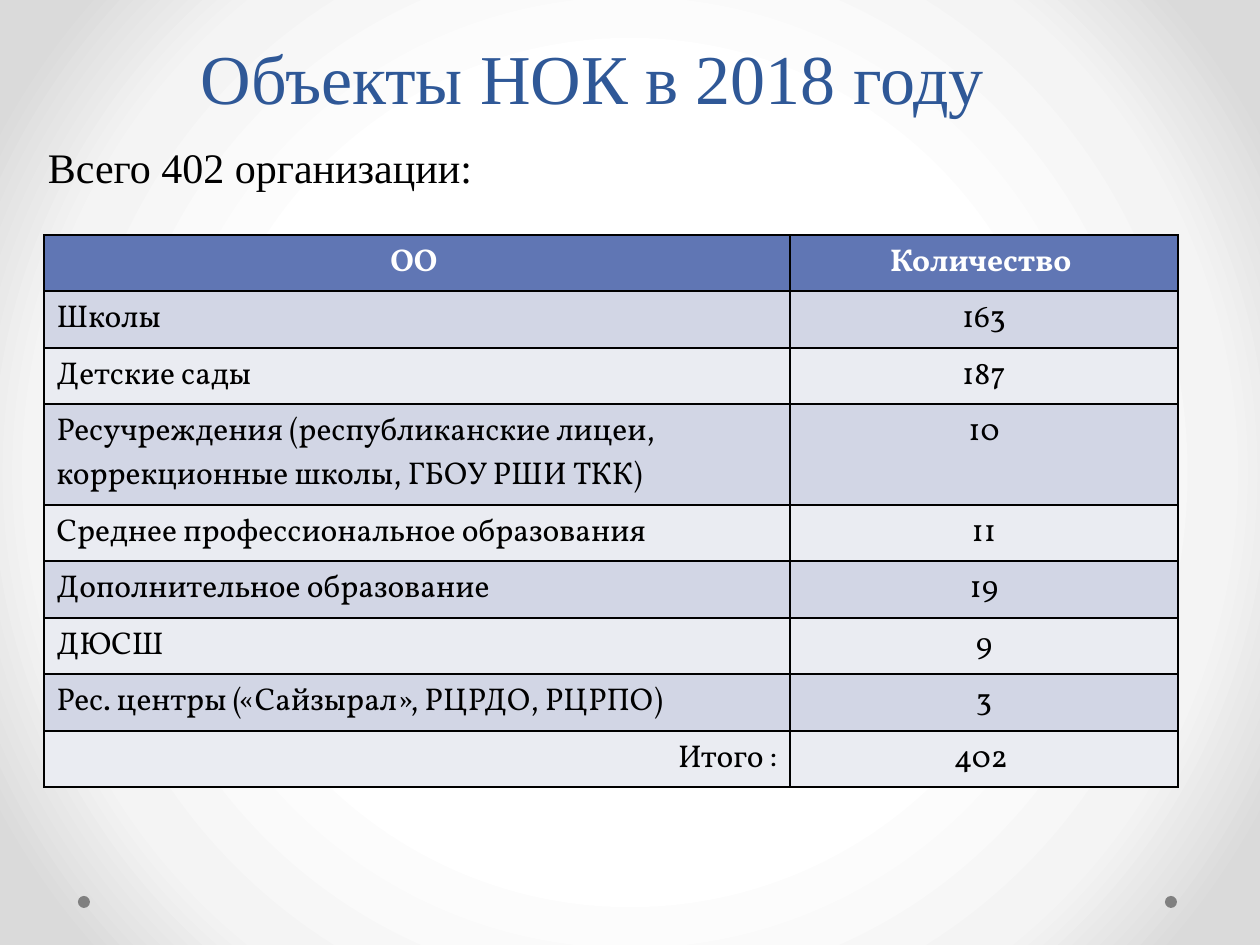
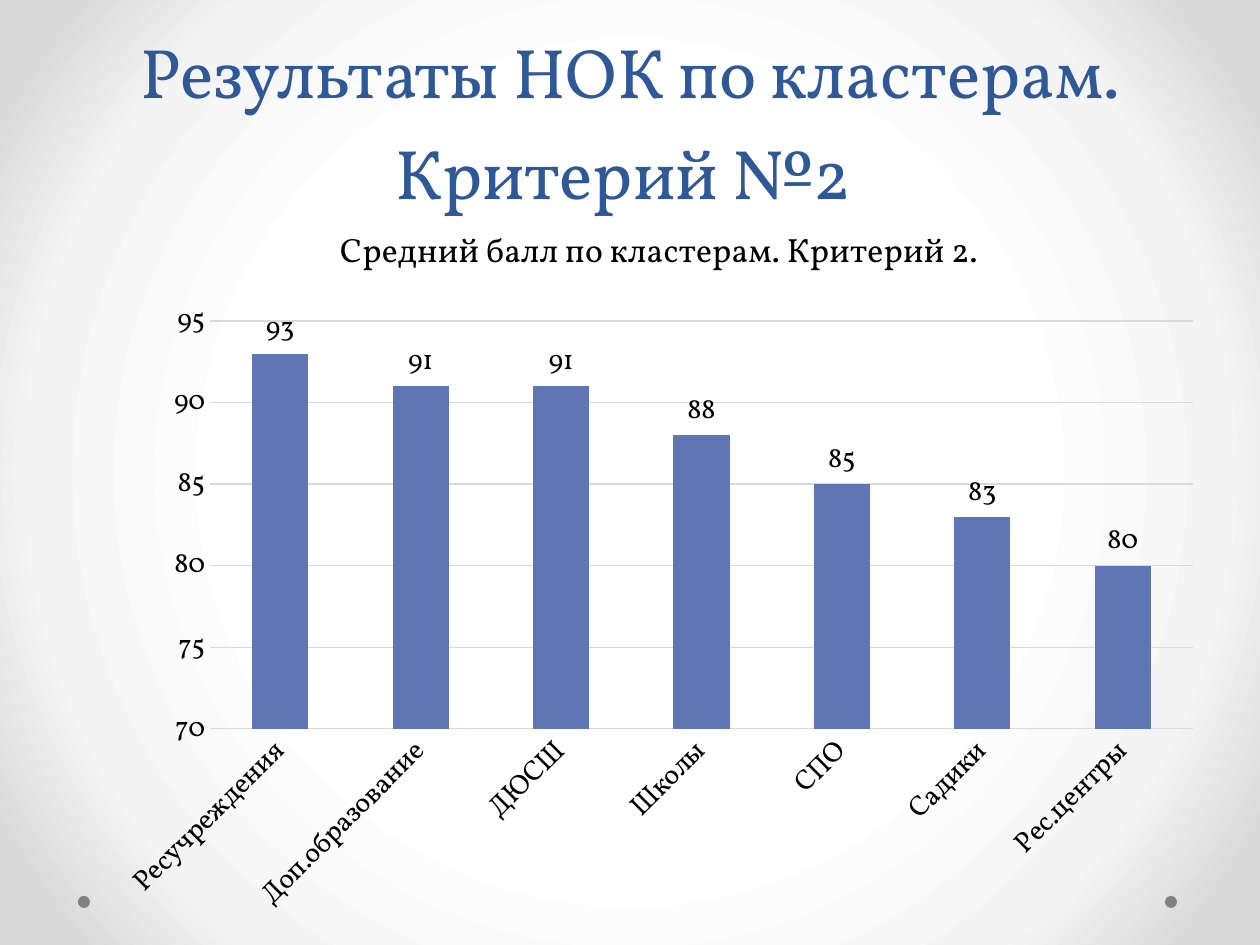
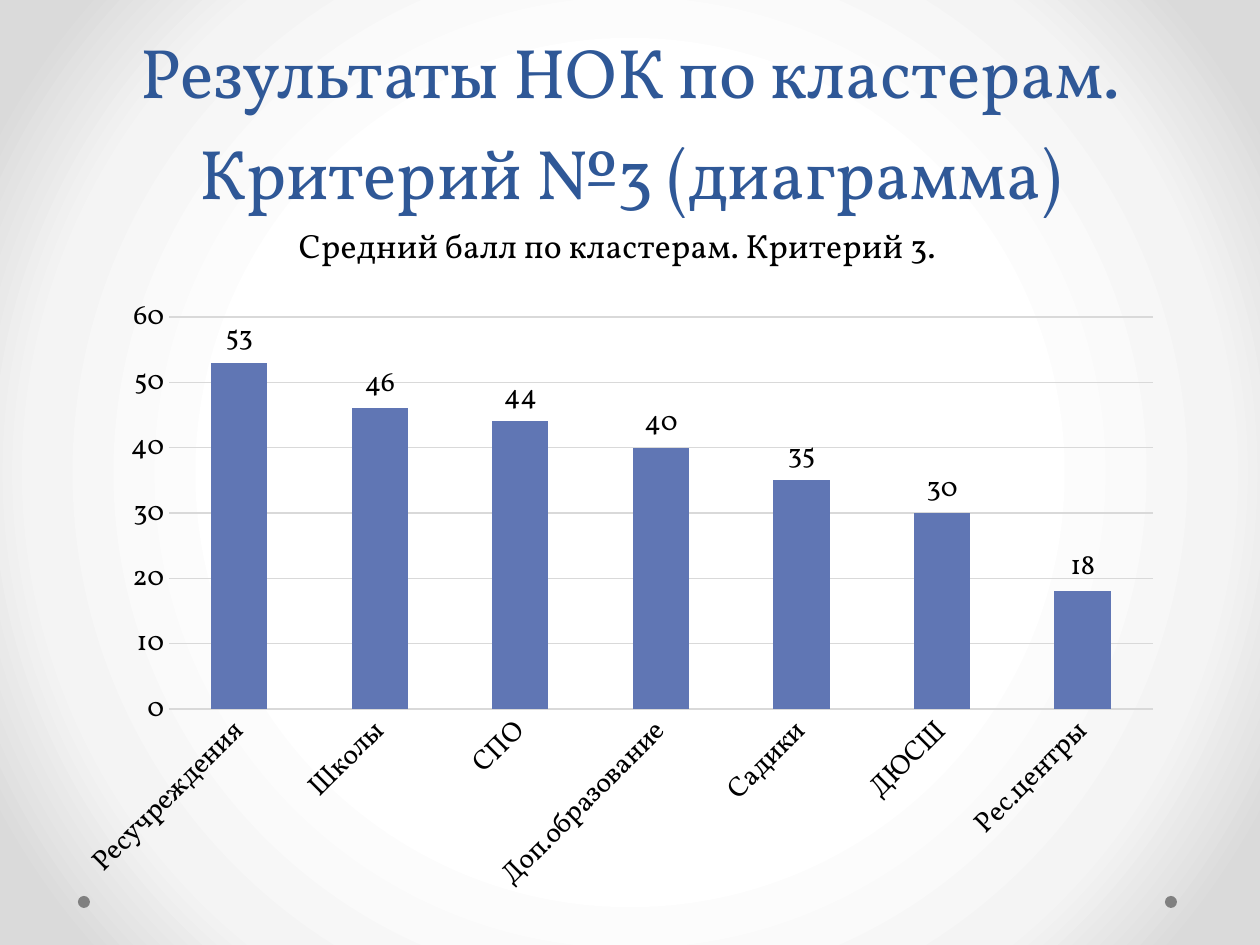
"""Build three slides on the 2018 quality assessment of schools."""
from lxml.etree import SubElement, fromstring
from pptx import Presentation
from pptx.chart.data import CategoryChartData
from pptx.dml.color import RGBColor
from pptx.enum.chart import XL_CHART_TYPE, XL_LABEL_POSITION, XL_TICK_MARK
from pptx.enum.shapes import MSO_SHAPE
from pptx.enum.text import MSO_ANCHOR, PP_ALIGN
from pptx.oxml.ns import nsdecls, qn
from pptx.util import Emu, Pt

EMU_PER_PX = 914400 / 126
BLACK = RGBColor(0x00, 0x00, 0x00)
WHITE = RGBColor(0xFF, 0xFF, 0xFF)
GREY = RGBColor(0x80, 0x80, 0x80)
GRID_GREY = RGBColor(0xD9, 0xD9, 0xD9)
TITLE_BLUE = RGBColor(0x2F, 0x58, 0x97)
ACCENT_BLUE = RGBColor(0x60, 0x76, 0xB4)
BAND_DARK = RGBColor(0xD2, 0xD6, 0xE5)
BAND_LIGHT = RGBColor(0xEA, 0xEC, 0xF2)
BACKDROP_STOPS = [(50, WHITE), (76, RGBColor(0xF4, 0xF4, 0xF4)),
                  (92, RGBColor(0xDA, 0xDA, 0xDA))]
SERIF = "Times New Roman"
VOLLKORN = "Vollkorn"

ORGANISATIONS = [
    ("ОО ", "Количество "),
    ("Школы", "163"),
    ("Детские сады", "187"),
    ("Ресучреждения (республиканские лицеи, коррекционные школы, ГБОУ РШИ ТКК)", "10"),
    ("Среднее профессиональное образования", "11"),
    ("Дополнительное образование", "19"),
    ("ДЮСШ", "9"),
    ("Рес. центры («Сайзырал», РЦРДО, РЦРПО)", "3"),
    ("Итого :", "402 "),
]
ROW_HEIGHTS = [56, 57, 56, 101, 56, 57, 56, 57, 56]
CRITERION_2 = {"Ресучреждения": 93, "Доп.образование": 91, "ДЮСШ": 91, "Школы": 88,
               "СПО": 85, "Садики": 83, "Рес.центры": 80}
CRITERION_3 = {"Ресучреждения": 53, "Школы": 46, "СПО": 44, "Доп.образование": 40,
               "Садики": 35, "ДЮСШ": 30, "Рес.центры": 18}


def px(*lengths):
    """Turn pixel lengths into EMU."""
    return [Emu(round(length * EMU_PER_PX)) for length in lengths]


def style_font(font, size, name=VOLLKORN, color=BLACK, bold=False):
    """Set the size, typeface, colour and weight of a font."""
    font.size, font.name, font.bold = Pt(size), name, bold
    font.color.rgb = color


def write_text(frame, text, align=PP_ALIGN.LEFT, leading=None, **font_format):
    """Write one formatted paragraph into a text frame."""
    paragraph = frame.paragraphs[0]
    paragraph.alignment = align
    if leading:
        paragraph.line_spacing = Pt(leading)
    run = paragraph.add_run()
    run.text = text
    style_font(run.font, **font_format)


def add_text(slide, text, box, anchor=MSO_ANCHOR.TOP, inset=(13, 6), **text_format):
    """Add a wrapped text box with the given left and top inset."""
    frame = slide.shapes.add_textbox(*px(*box)).text_frame
    frame.word_wrap = True
    frame.vertical_anchor = anchor
    frame.margin_left, frame.margin_top = px(*inset)
    write_text(frame, text, **text_format)


def add_title(slide, text, box, font=VOLLKORN):
    """Add a slide title that stands on the bottom of its box."""
    add_text(slide, text, box, anchor=MSO_ANCHOR.BOTTOM, align=PP_ALIGN.CENTER,
             leading=58, size=40, name=font, color=TITLE_BLUE)


def set_backdrop(master):
    """Give the master a grey vignette that every slide inherits."""
    fill = master.background.fill
    fill.gradient()
    stops = "".join(f'<a:gs pos="{pos * 1000}"><a:srgbClr val="{color}"/></a:gs>'
                    for pos, color in BACKDROP_STOPS)
    vignette = fromstring(
        f'<a:gradFill {nsdecls("a")} rotWithShape="1"><a:gsLst>{stops}</a:gsLst>'
        '<a:path path="circle"><a:fillToRect l="50000" t="50000" r="50000" b="50000"/>'
        '</a:path></a:gradFill>')
    linear = next(master.element.iter(qn("a:gradFill")))
    linear.getparent().replace(linear, vignette)


def add_slide(deck):
    """Add a blank slide with the two footer dots."""
    slide = deck.slides.add_slide(deck.slide_layouts[6])
    for left in (1165, 78):
        dot = slide.shapes.add_shape(MSO_SHAPE.OVAL, *px(left, 896, 12, 12))
        dot.shadow.inherit = False
        dot.fill.solid()
        dot.fill.fore_color.rgb = GREY
        dot.line.fill.background()
    return slide


def border_cell(cell):
    """Draw a thin black border on all sides of a cell."""
    properties = cell._tc.get_or_add_tcPr()
    for position, side in enumerate(("lnL", "lnR", "lnT", "lnB")):
        properties.insert(position, fromstring(
            f'<a:{side} {nsdecls("a")} w="12700"><a:solidFill>'
            f'<a:srgbClr val="{BLACK}"/></a:solidFill></a:{side}>'))


def add_count_table(slide, rows, corner, column_widths, row_heights):
    """Add a banded table with a header, counts and a total row."""
    box = (*corner, sum(column_widths), sum(row_heights))
    table = slide.shapes.add_table(len(rows), len(column_widths), *px(*box)).table
    for column, width in zip(table.columns, px(*column_widths)):
        column.width = width
    for table_row, height in zip(table.rows, px(*row_heights)):
        table_row.height = height
    last = len(rows) - 1
    for row, texts in enumerate(rows):
        header = row == 0
        band = ACCENT_BLUE if header else BAND_DARK if row % 2 else BAND_LIGHT
        name_align = {0: PP_ALIGN.CENTER, last: PP_ALIGN.RIGHT}.get(row, PP_ALIGN.LEFT)
        for column, align in enumerate((name_align, PP_ALIGN.CENTER)):
            cell = table.cell(row, column)
            cell.fill.solid()
            cell.fill.fore_color.rgb = band
            border_cell(cell)
            write_text(cell.text_frame, texts[column], align=align, size=18,
                       color=WHITE if header else BLACK, bold=header)


def set_layout(parent, index, **fractions):
    """Place a chart part by fractions of the chart's size."""
    for old in parent.findall(qn("c:layout")):
        parent.remove(old)
    layout = parent.makeelement(qn("c:layout"))
    parent.insert(index, layout)
    manual = SubElement(layout, qn("c:manualLayout"))
    if "w" in fractions:
        SubElement(manual, qn("c:layoutTarget"), val="inner")
    for side in "xy":
        SubElement(manual, qn(f"c:{side}Mode"), val="edge")
    for side, fraction in fractions.items():
        SubElement(manual, qn(f"c:{side}"), val=f"{fraction:.4f}")


def add_score_chart(slide, title, scores, box, scale):
    """Add a column chart of mean scores by cluster."""
    data = CategoryChartData()
    data.categories = list(scores)
    data.add_series("Series 1", list(scores.values()))
    chart = slide.shapes.add_chart(XL_CHART_TYPE.COLUMN_CLUSTERED, *px(*box), data).chart
    style_font(chart.font, 16)
    chart.has_legend = False
    write_text(chart.chart_title.text_frame, title, align=PP_ALIGN.CENTER, size=19.2)

    plot = chart.plots[0]
    plot.gap_width = 150
    plot.vary_by_categories = False
    plot.has_data_labels = True
    plot.data_labels.show_value = True
    plot.data_labels.position = XL_LABEL_POSITION.OUTSIDE_END
    style_font(plot.data_labels.font, 16)
    bars = plot.series[0].format.fill
    bars.solid()
    bars.fore_color.rgb = ACCENT_BLUE

    clusters, values = chart.category_axis, chart.value_axis
    for axis in (clusters, values):
        axis.major_tick_mark = axis.minor_tick_mark = XL_TICK_MARK.NONE
        axis.format.line.fill.background()
        style_font(axis.tick_labels.font, 16)
    next(clusters._element.iter(qn("a:bodyPr"))).set("rot", "-2700000")
    values.minimum_scale, values.maximum_scale, values.major_unit = scale
    grid = values.major_gridlines.format.line
    grid.color.rgb = GRID_GREY
    grid.width = Pt(0.75)

    width, height = box[2:]
    left, top, right, bottom = 106, 122, 23, 200
    set_layout(chart.chart_title._element, 1, x=230 / width, y=21 / height)
    set_layout(next(chart.element.iter(qn("c:plotArea"))), 0,
               x=left / width, y=top / height,
               w=(width - left - right) / width, h=(height - top - bottom) / height)


def main():
    """Build and save the deck."""
    deck = Presentation()
    deck.slide_width, deck.slide_height = px(1260, 945)
    set_backdrop(deck.slide_master)

    objects = add_slide(deck)
    add_title(objects, "Объекты НОК в 2018 году", (25, 16, 1134, 109), font=SERIF)
    add_text(objects, "Всего 402 организации:", (25, 135, 1221, 753),
             inset=(23, 7), size=24, name=SERIF)
    add_count_table(objects, ORGANISATIONS, (44, 235), (746, 388), ROW_HEIGHTS)

    for number, suffix, scores, box, scale in (
            (2, " ", CRITERION_2, (104, 199, 1112, 730), (70, 95, 5)),
            (3, " (диаграмма)", CRITERION_3, (63, 195, 1113, 714), (0, 60, 10))):
        results = add_slide(deck)
        add_title(results, f"Результаты НОК по кластерам. Критерий №{number}{suffix}",
                  (63, 26, 1134, 194))
        add_score_chart(results, f"Средний балл по кластерам. Критерий {number}.",
                        scores, box, scale)

    deck.save("out.pptx")


if __name__ == "__main__":
    main()
